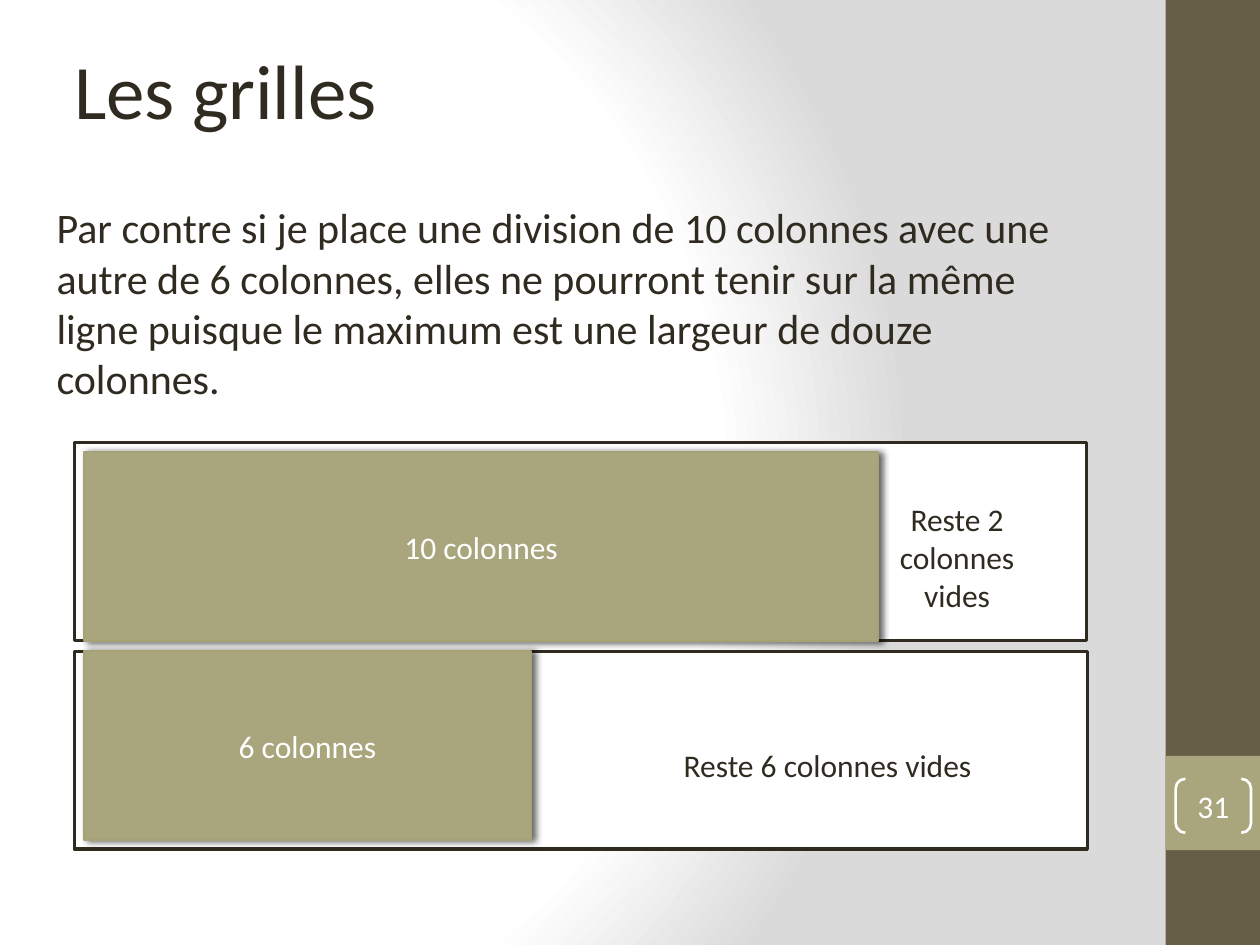
from pptx import Presentation
from pptx.dml.color import RGBColor
from pptx.enum import shapes, text
from pptx.oxml import parse_xml
from pptx.oxml.ns import nsdecls
from pptx.util import Cm, Pt

DARK = RGBColor(0x2F, 0x2B, 0x20)
BROWN = RGBColor(0x67, 0x5E, 0x47)
OLIVE = RGBColor(0xA9, 0xA5, 0x7C)
OLIVE_EDGE = RGBColor(0xA6, 0xA2, 0x78)
WHITE = RGBColor(0xFF, 0xFF, 0xFF)
FONT = "Calibri"

BACKGROUND = f"""<p:bg {nsdecls("p", "a")}><p:bgPr>
<a:gradFill rotWithShape="1"><a:gsLst>
<a:gs pos="0"><a:srgbClr val="FFFFFF"/></a:gs>
<a:gs pos="75000"><a:srgbClr val="FFFFFF"/></a:gs>
<a:gs pos="100000"><a:srgbClr val="DADADA"/></a:gs>
</a:gsLst><a:path path="circle">
<a:fillToRect l="20000" t="50000" r="100000" b="50000"/>
</a:path></a:gradFill><a:effectLst/></p:bgPr></p:bg>"""

SHADOW = f"""<a:effectLst {nsdecls("a")}>
<a:outerShdw blurRad="{Pt(4)}" dist="{Pt(2)}" dir="0" algn="ctr" rotWithShape="0">
<a:srgbClr val="000000"><a:alpha val="60000"/></a:srgbClr>
</a:outerShdw></a:effectLst>"""


def write(shape, words, size, color, align=text.PP_ALIGN.LEFT):
    frame = shape.text_frame
    frame.text = words
    para = frame.paragraphs[0]
    para.alignment = align
    font = para.runs[0].font
    font.name, font.size, font.color.rgb = FONT, Pt(size), color


def add_shape(page, box, fill=None, edge=None, weight=1,
              kind=shapes.MSO_SHAPE.RECTANGLE):
    shape = page.shapes.add_shape(kind, *map(Cm, box))
    shape.shadow.inherit = False
    if fill is None:
        shape.fill.background()
    else:
        shape.fill.solid()
        shape.fill.fore_color.rgb = fill
    if edge is None:
        shape.line.fill.background()
    else:
        shape.line.color.rgb = edge
        shape.line.width = Pt(weight)
    return shape


def add_text(page, box, words, size, align=text.PP_ALIGN.LEFT):
    label = page.shapes.add_textbox(*map(Cm, box))
    label.text_frame.word_wrap = True
    label.text_frame.auto_size = text.MSO_AUTO_SIZE.SHAPE_TO_FIT_TEXT
    write(label, words, size, DARK, align)


def add_sidebar(page, box, number):
    left, top, width, height = box
    add_shape(page, box, BROWN)
    # Page number in brackets on a square tab
    tab_top = top + 0.8 * height
    add_shape(page, (left, tab_top, width, width), OLIVE)
    bracket = add_shape(page, (left + 0.2, tab_top + 0.46, 1.52, 1.09), None,
                        WHITE, 1.5, shapes.MSO_SHAPE.DOUBLE_BRACKET)
    bracket.adjustments[0] = 0.18
    frame = bracket.text_frame
    frame.margin_left = frame.margin_right = 0
    frame.margin_top = frame.margin_bottom = 0
    frame.vertical_anchor = text.MSO_ANCHOR.MIDDLE
    write(bracket, number, 18, WHITE, text.PP_ALIGN.CENTER)


def place_title(page, box, words):
    title = page.shapes.title
    title.left, title.top, title.width, title.height = map(Cm, box)
    frame = title.text_frame
    frame.word_wrap = False
    frame.auto_size = text.MSO_AUTO_SIZE.SHAPE_TO_FIT_TEXT
    frame.vertical_anchor = text.MSO_ANCHOR.TOP
    write(title, words, 44, DARK)


def add_grid_row(page, box, bar_offset, bar_width, bar_words, note_box, note_words):
    """Frame with a filled bar and a note about the columns left over."""
    left, top = box[:2]
    add_shape(page, box, WHITE, DARK, 2)
    bar = add_shape(page, (left + 0.2, top + bar_offset, bar_width, 3.81),
                    OLIVE, OLIVE_EDGE)
    bar.shadow.inherit = True
    bar.element.spPr.append(parse_xml(SHADOW))
    bar.text_frame.vertical_anchor = text.MSO_ANCHOR.MIDDLE
    write(bar, bar_words, 18, WHITE, text.PP_ALIGN.CENTER)
    x, y, width, height = note_box
    add_text(page, (left + x, top + y, width, height), note_words, 18,
             text.PP_ALIGN.CENTER)


def main():
    deck = Presentation()
    deck.slide_width, deck.slide_height = Cm(25.4), Cm(19.05)
    page = deck.slides.add_slide(deck.slide_layouts[5])
    page.element.cSld.insert(0, parse_xml(BACKGROUND))

    add_sidebar(page, (23.5, 0, 1.9, 19.05), "31")
    place_title(page, (1.24, 0.74, 6.68, 2.13), "Les grilles")
    add_text(page, (0.89, 3.94, 21.59, 4.37),
             "Par contre si je place une division de 10 colonnes avec une autre "
             "de 6 colonnes, elles ne pourront tenir sur la même ligne puisque "
             "le maximum est une largeur de douze colonnes.", 24)

    # Two rows of the twelve-column grid
    add_grid_row(page, (1.5, 8.92, 20.4, 3.99), 0.2, 16, "10 colonnes",
                 (15.8, 1.04, 3.99, 2.57), "Reste 2 colonnes vides")
    add_grid_row(page, (1.5, 13.13, 20.42, 3.99), 0, 9, "6 colonnes",
                 (10.79, 1.78, 8.79, 1.02), "Reste 6 colonnes vides")
    deck.save("out.pptx")


if __name__ == "__main__":
    main()
